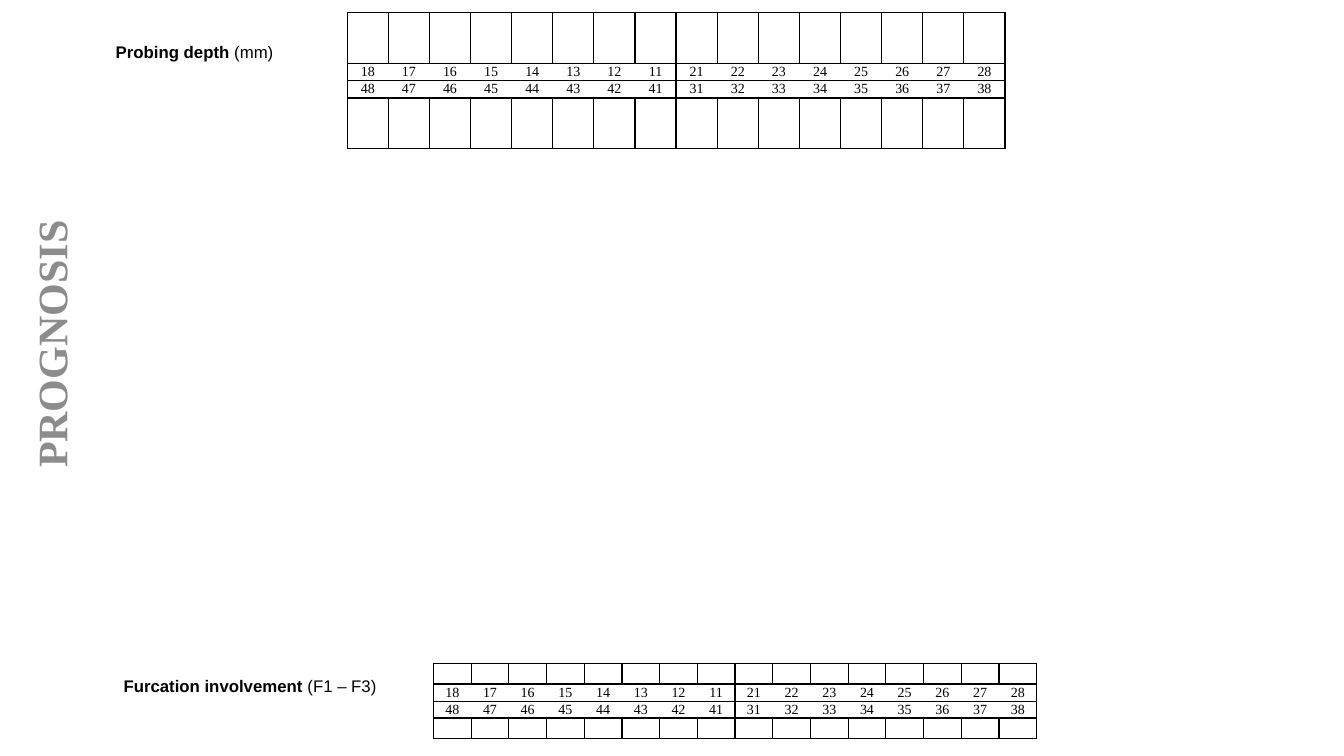
from lxml import etree
from pptx import Presentation
from pptx.dml.color import RGBColor
from pptx.enum.text import MSO_ANCHOR, MSO_AUTO_SIZE, PP_ALIGN
from pptx.oxml.ns import qn
from pptx.util import Pt

MID, TOP = MSO_ANCHOR.MIDDLE, MSO_ANCHOR.TOP
CENTER, LEFT = PP_ALIGN.CENTER, PP_ALIGN.LEFT
FIXED = MSO_AUTO_SIZE.NONE

HEX = {"ink": "000000", "gray": "8C8C8C"}
SANS, SERIF = "Arial", "Times New Roman"
THIN, THICK = 1, 1.5

# Tooth numbers run outward from the midline in each quadrant.
UPPER = [*range(18, 10, -1), *range(21, 29)]
LOWER = [*range(48, 40, -1), *range(31, 39)]
COLS = len(UPPER)
HALF = COLS // 2


def add_run(para, text, size, font, color="ink", bold=False):
    run = para.add_run()
    run.text = text
    run.font.size = Pt(size)
    run.font.name = font
    run.font.bold = bold
    run.font.color.rgb = RGBColor.from_string(HEX[color])


def place(shape, left, top, width, height):
    shape.left, shape.top = Pt(left), Pt(top)
    shape.width, shape.height = Pt(width), Pt(height)


def add_title(slide, text):
    title = slide.shapes.title
    place(title, -174.2, 226.8, 420.5, 38.2)
    title.rotation = 270
    frame = title.text_frame
    frame.auto_size = FIXED
    frame.vertical_anchor = MID
    para = frame.paragraphs[0]
    para.alignment = CENTER
    add_run(para, text, 30, SERIF, "gray", True)


def add_label(slide, name, unit, left, top, width):
    box = slide.shapes.add_textbox(Pt(left), Pt(top), Pt(width), Pt(21.6))
    frame = box.text_frame
    frame.word_wrap = False
    frame.vertical_anchor = TOP
    para = frame.paragraphs[0]
    para.alignment = LEFT
    add_run(para, name, 12, SANS, bold=True)
    add_run(para, unit, 12, SANS)


def set_edge(cell, side, width):
    """Draw one cell border; a width of 0 hides it."""
    props = cell._tc.get_or_add_tcPr()
    line = etree.SubElement(props, qn(f"a:ln{side}"), w=str(Pt(width)))
    if width:
        fill = etree.SubElement(line, qn("a:solidFill"))
        etree.SubElement(fill, qn("a:srgbClr"), val=HEX["ink"])
    else:
        etree.SubElement(line, qn("a:noFill"))


def side_width(row, edge):
    """Width of a vertical rule: number rows have only outer and middle ones."""
    if edge == HALF:
        return THICK
    return THIN if row in (0, 3) or edge in (0, COLS) else 0


def add_chart_grid(slide, left, top, width, heights):
    """Tooth chart: a row to fill in above and below the two number rows."""
    frame = slide.shapes.add_table(
        len(heights), COLS, Pt(left), Pt(top), Pt(width), Pt(sum(heights)))
    table = frame.table
    table.first_row = table.horz_banding = False
    for col in table.columns:
        col.width = Pt(width / COLS)
    rules = [THIN, THICK, THIN, THICK, THIN]
    texts = [None, UPPER, LOWER, None]
    for r, (height, teeth) in enumerate(zip(heights, texts)):
        table.rows[r].height = Pt(height)
        for c in range(COLS):
            cell = table.cell(r, c)
            cell.margin_left = cell.margin_right = Pt(5)
            cell.margin_top = cell.margin_bottom = 0
            cell.vertical_anchor = MID
            para = cell.text_frame.paragraphs[0]
            para.alignment = CENTER
            if teeth:
                add_run(para, str(teeth[c]), 10, SERIF)
            else:
                etree.SubElement(para._p, qn("a:endParaRPr"), sz="1000")
            set_edge(cell, "L", side_width(r, c))
            set_edge(cell, "R", side_width(r, c + 1))
            set_edge(cell, "T", rules[r])
            set_edge(cell, "B", rules[r + 1])
            cell.fill.background()


def main():
    deck = Presentation()
    deck.slide_width, deck.slide_height = Pt(960), Pt(540)
    slide = deck.slides.add_slide(deck.slide_layouts[5])
    add_title(slide, "PROGNOSIS")
    add_label(slide, "Furcation involvement ", "(F1 – F3)", 81.2, 478.8, 197.3)
    add_label(slide, "Probing depth ", "(mm)", 75.6, 26.4, 172)
    add_chart_grid(slide, 309.6, 474, 431.2, [14.8, 11.8, 11.8, 14.8])
    add_chart_grid(slide, 248, 9, 470, [36.4, 12.2, 12.2, 36.4])
    deck.save("out.pptx")


if __name__ == "__main__":
    main()
